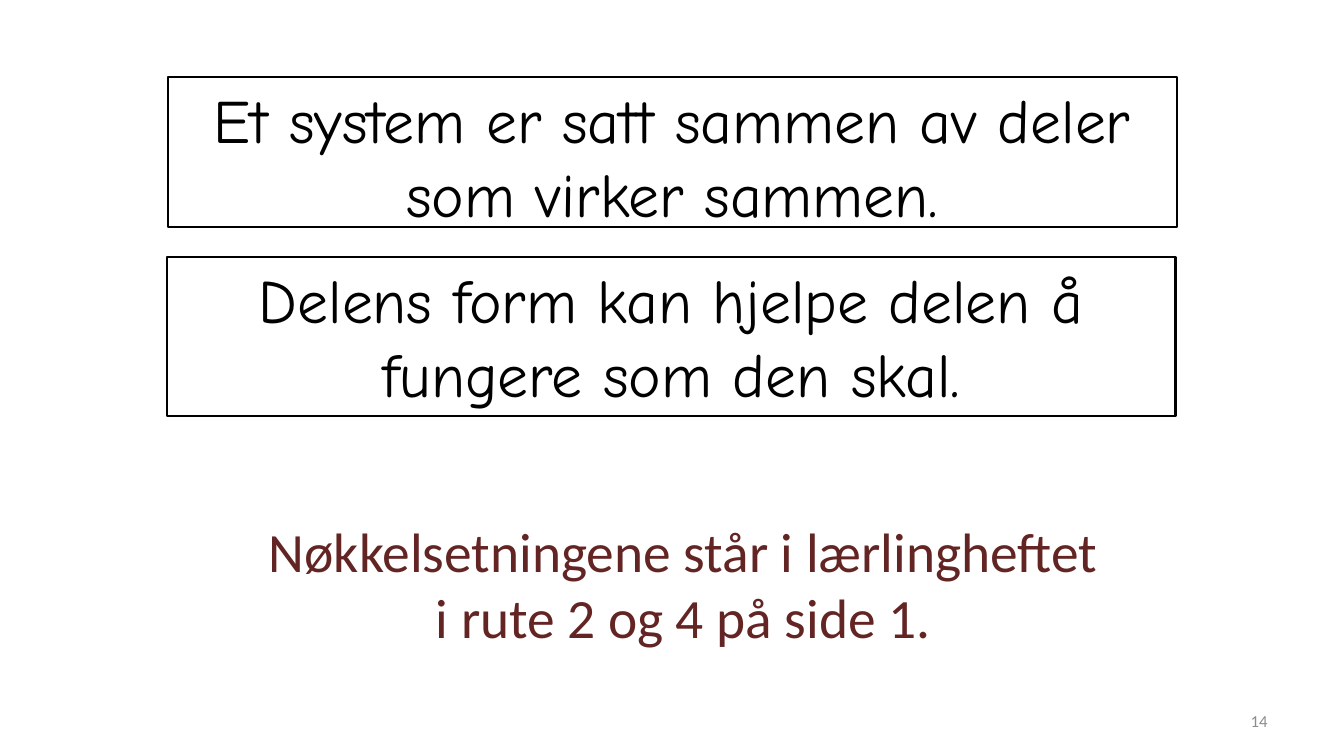
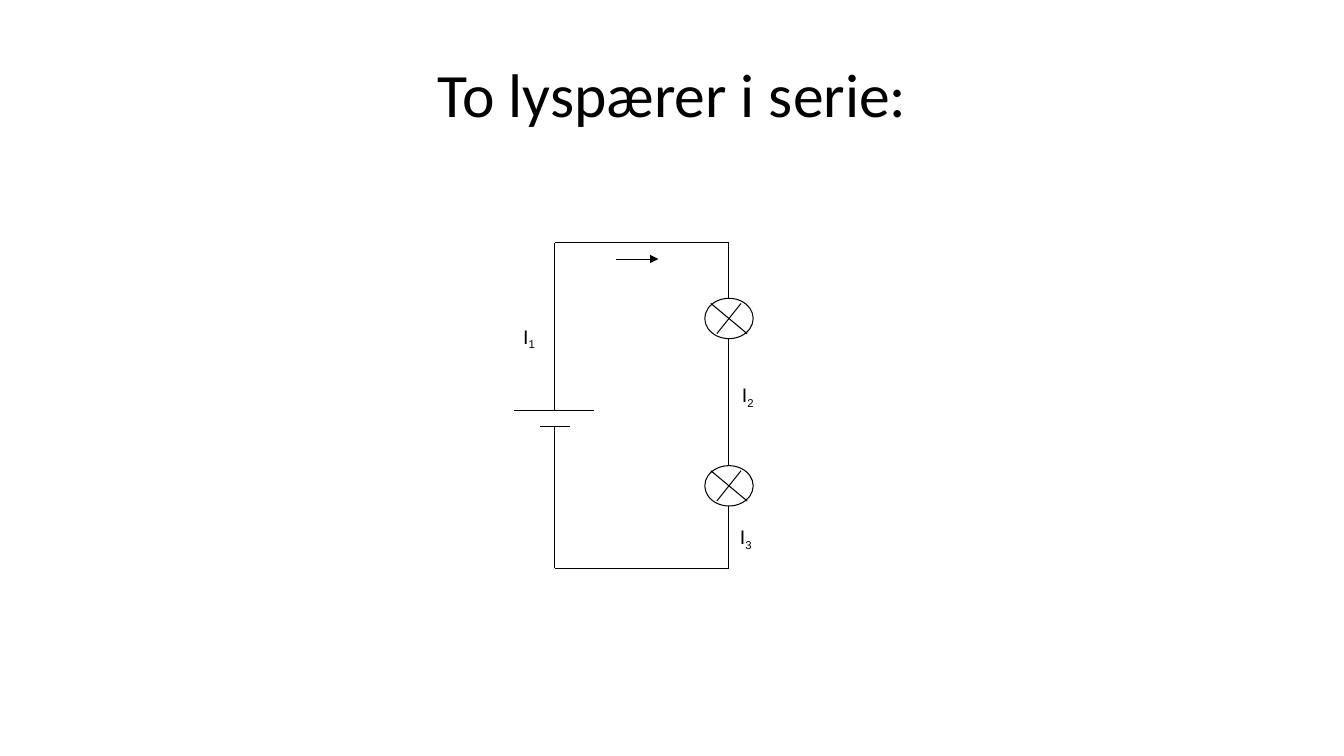
from dataclasses import dataclass

from lxml import etree
from pptx import Presentation
from pptx.dml.color import RGBColor
from pptx.enum.shapes import MSO_CONNECTOR, MSO_SHAPE
from pptx.enum.text import MSO_ANCHOR, PP_ALIGN
from pptx.oxml.ns import qn
from pptx.util import Emu, Pt

LINE = MSO_CONNECTOR.STRAIGHT
RECT, OVAL = MSO_SHAPE.RECTANGLE, MSO_SHAPE.OVAL
LEFT, MID, RIGHT = PP_ALIGN.LEFT, PP_ALIGN.CENTER, PP_ALIGN.RIGHT
TOP, CENTER = MSO_ANCHOR.TOP, MSO_ANCHOR.MIDDLE
PX = 9144  # 100 px to the inch


@dataclass(frozen=True)
class Theme:
    ink: str = "000000"
    paper: str = "FFFFFF"
    accent: str = "632523"
    muted: str = "8C8C8C"
    body: str = "Calibri"
    hand: str = "Comic Neue"
    label: str = "Arial"
    title_size: float = 44
    note_size: float = 39.6
    label_size: float = 14
    foot_size: float = 12
    frame: float = 1.5
    wire: float = 0.75


THEME = Theme()

# Boxes are left, top, width, height in px
KEYS = [
    ("Et system er satt sammen av deler som virker sammen.", (167, 76, 1000, 149)),
    ("Delens form kan hjelpe delen å fungere som den skal.", (166, 255, 1000, 158)),
]
NOTE = ["Nøkkelsetningene står i lærlingheftet ", "i rute 2 og 4 på side 1. "]
NOTE_BOX = (234, 516, 900, 125)
NUMBER, NUMBER_BOX = "14", (956, 695, 311, 40)

TITLE, TITLE_BOX = "To lyspærer i serie:", (67, 30, 1200, 125)
WEST, EAST, NORTH, SOUTH = 550, 723, 241, 564
BULB_W, BULB_H = 48, 40
BULBS = [316, 482]  # centre heights on the east wire
CROSS = [(12, -15, -12, 15), (-18, -15, 18, 15)]
PLUS, MINUS = 407, 423
CELL = [(510, PLUS, 589, PLUS), (536, MINUS, 565, MINUS)]
ARROW = (611, 257, 653, 257)
LABELS = [("1", (509, 317, 33, 34)), ("2", (726, 375, 45, 34)),
          ("3", (724, 516, 62, 33))]


def px(*nums):
    return [Emu(n * PX) for n in nums]


def rgb(code):
    return RGBColor.from_string(code)


def write(slide, text, box, size, font=THEME.body, color=THEME.ink,
          align=MID, anchor=CENTER, sub="", shape=None):
    """Put text, or a list of lines, into a shape or a new text box."""
    shape = shape or slide.shapes.add_textbox(*px(*box))
    frame = shape.text_frame
    frame.word_wrap = True
    frame.vertical_anchor = anchor
    par = frame.paragraphs[0]
    par.alignment = align
    par.font.size = Pt(size)
    lines = [text] if isinstance(text, str) else text
    runs = []
    for i, line in enumerate(lines):
        if i:
            par.add_line_break()
        runs.append(par.add_run())
        runs[-1].text = line
    if sub:
        runs.append(par.add_run())
        runs[-1].text = sub
        runs[-1]._r.get_or_add_rPr().set("baseline", "-25000")
    for run in runs:
        run.font.size = Pt(size)
        run.font.name = font
        run.font.color.rgb = rgb(color)


def outline(slide, kind, box, width, fill=None):
    shape = slide.shapes.add_shape(kind, *px(*box))
    shape.shadow.inherit = False
    if fill:
        shape.fill.solid()
        shape.fill.fore_color.rgb = rgb(fill)
    else:
        shape.fill.background()
    shape.line.color.rgb = rgb(THEME.ink)
    shape.line.width = Pt(width)
    return shape


def wire(slide, ends, arrow=False):
    line = slide.shapes.add_connector(LINE, *px(*ends))
    line.line.color.rgb = rgb(THEME.ink)
    line.line.width = Pt(THEME.wire)
    if arrow:
        etree.SubElement(line.line._get_or_add_ln(), qn("a:tailEnd"), type="triangle")
    etree.SubElement(line._element.spPr, qn("a:effectLst"))


def key_slide(slide):
    for text, box in KEYS:
        card = outline(slide, RECT, box, THEME.frame, THEME.paper)
        write(slide, text, box, THEME.title_size, font=THEME.hand,
              anchor=TOP, shape=card)
    write(slide, NOTE, NOTE_BOX, THEME.note_size, color=THEME.accent)
    write(slide, NUMBER, NUMBER_BOX, THEME.foot_size, color=THEME.muted, align=RIGHT)


def circuit_slide(slide):
    write(slide, TITLE, TITLE_BOX, THEME.title_size)
    for y in (NORTH, SOUTH):
        wire(slide, (WEST, y, EAST, y))
    wire(slide, (WEST, NORTH, WEST, PLUS))
    wire(slide, (WEST, MINUS, WEST, SOUTH))
    for plate in CELL:
        wire(slide, plate)

    start = NORTH
    for mid in BULBS:
        top = mid - BULB_H // 2
        wire(slide, (EAST, start, EAST, top))
        outline(slide, OVAL, (EAST - BULB_W // 2, top, BULB_W, BULB_H), THEME.wire)
        for x1, y1, x2, y2 in CROSS:
            wire(slide, (EAST + x1, mid + y1, EAST + x2, mid + y2))
        start = top + BULB_H
    wire(slide, (EAST, start, EAST, SOUTH))

    wire(slide, ARROW, arrow=True)
    for sub, box in LABELS:
        write(slide, "I", box, THEME.label_size, font=THEME.label,
              align=LEFT, anchor=TOP, sub=sub)


def main():
    deck = Presentation()
    deck.slide_width, deck.slide_height = px(1333, 750)
    blank = deck.slide_layouts[6]
    for build in (key_slide, circuit_slide):
        build(deck.slides.add_slide(blank))
    deck.save("out.pptx")


if __name__ == "__main__":
    main()
